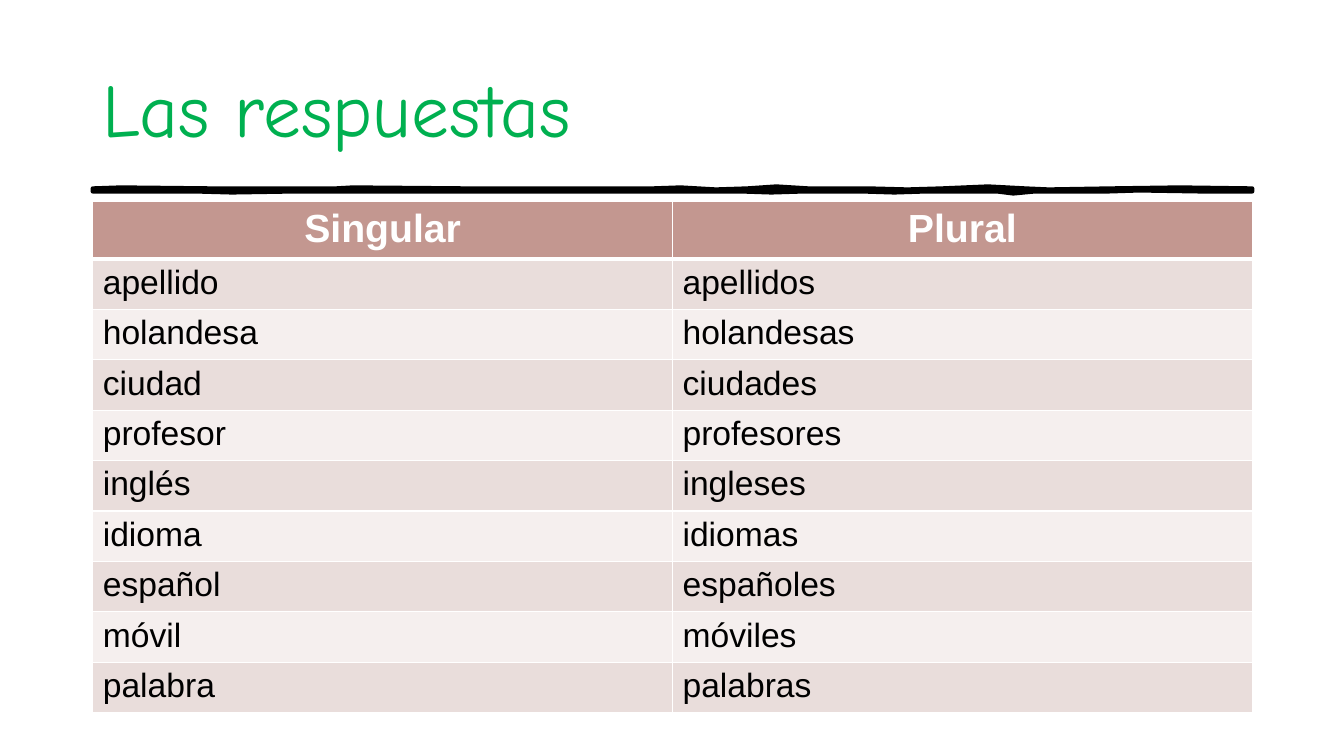
"""Build the answer slide: a title, a hand-drawn rule and a singular/plural table."""
from lxml import etree
from pptx import Presentation, util as u
from pptx.dml.color import RGBColor
from pptx.enum import text
from pptx.oxml.ns import qn

TITLE = "Las respuestas"
HEADINGS = ("Singular", "Plural")
WORDS = [
    ("apellido", "apellidos"),
    ("holandesa", "holandesas"),
    ("ciudad", "ciudades"),
    ("profesor", "profesores"),
    ("inglés", "ingleses"),
    ("idioma", "idiomas"),
    ("español", "españoles"),
    ("móvil", "móviles"),
    ("palabra", "palabras"),
]
THEME = {
    "title": {"name": "Comic Neue", "size": 54, "bold": False, "color": "00B050"},
    "heading": {"name": "Arial", "size": 28, "bold": True, "color": "FFFFFF"},
    "word": {"name": "Arial", "size": 24, "bold": False, "color": "000000"},
    "heading_fill": "C39790",
    "bands": ("E9DDDB", "F5EFEE"),
    "border": "FFFFFF",
    "rule": "000000",
}
LEFT, WIDTH = 0.92, 11.5
TITLE_TOP, TITLE_HEIGHT = 0.4, 1.45
TABLE_TOP, HEADING_HEIGHT, WORD_HEIGHT = 2, 0.53, 0.47
RULE_TOP_EDGE = [
    (0.92, 1.87), (1.2, 1.86), (2.12, 1.87), (3.33, 1.87), (3.5, 1.86), (4.65, 1.87),
    (5.37, 1.87), (5.9, 1.87), (6.47, 1.87), (6.75, 1.86), (7.1, 1.88), (7.41, 1.87),
    (7.7, 1.85), (8.02, 1.87), (8.62, 1.87), (9.0, 1.88), (9.34, 1.87), (9.8, 1.85),
    (10.17, 1.87), (10.4, 1.88), (11.01, 1.87), (11.7, 1.86), (12.42, 1.87),
]
RULE_BOTTOM_EDGE = [
    (12.42, 1.9), (11.93, 1.9), (11.3, 1.89), (10.98, 1.9), (10.26, 1.9), (10.05, 1.92),
    (9.89, 1.9), (9.17, 1.9), (8.87, 1.91), (8.56, 1.9), (7.96, 1.9), (7.65, 1.91),
    (7.36, 1.9), (6.75, 1.9), (6.35, 1.9), (5.92, 1.9), (5.2, 1.9), (4.83, 1.9),
    (4.22, 1.9), (3.39, 1.9), (2.9, 1.9), (2.3, 1.91), (1.95, 1.9), (0.92, 1.9),
]


def write(paragraph, wording, style, align):
    paragraph.alignment = align
    run = paragraph.add_run()
    run.text = wording
    formats = {"name": style["name"], "size": u.Pt(style["size"]), "bold": style["bold"]}
    for attribute, value in formats.items():
        setattr(run.font, attribute, value)
    run.font.color.rgb = RGBColor.from_string(style["color"])


def paint(fill, color):
    fill.solid()
    fill.fore_color.rgb = RGBColor.from_string(color)


def add_borders(cell, points):
    properties = cell._tc.get_or_add_tcPr()
    for position, (side, weight) in enumerate(points.items()):
        edge = etree.Element(qn(f"a:ln{side}"), w=str(u.Pt(weight)))
        solid = etree.SubElement(edge, qn("a:solidFill"))
        etree.SubElement(solid, qn("a:srgbClr"), val=THEME["border"])
        properties.insert(position, edge)


def add_rule(slide):
    start, *rest = [(u.Inches(x), u.Inches(y)) for x, y in RULE_TOP_EDGE + RULE_BOTTOM_EDGE]
    builder = slide.shapes.build_freeform(*start)
    builder.add_line_segments(rest, close=True)
    rule = builder.convert_to_shape()
    rule.shadow.inherit = False
    paint(rule.fill, THEME["rule"])
    paint(rule.line.fill, THEME["rule"])
    rule.line.width = u.Pt(3)
    etree.SubElement(rule.line._get_or_add_ln(), qn("a:round"))


def add_title(slide):
    box = slide.shapes.add_textbox(*map(u.Inches, (LEFT, TITLE_TOP, WIDTH, TITLE_HEIGHT)))
    frame = box.text_frame
    frame.word_wrap = True
    frame.vertical_anchor = text.MSO_ANCHOR.MIDDLE
    frame.paragraphs[0].line_spacing = 0.9
    write(frame.paragraphs[0], TITLE, THEME["title"], text.PP_ALIGN.LEFT)


def add_answers(slide):
    rows = [HEADINGS, *WORDS]
    height = HEADING_HEIGHT + WORD_HEIGHT * len(WORDS)
    bounds = map(u.Inches, (LEFT, TABLE_TOP, WIDTH, height))
    answers = slide.shapes.add_table(len(rows), len(HEADINGS), *bounds).table
    for r, entries in enumerate(rows):
        heading = r == 0
        answers.rows[r].height = u.Inches(HEADING_HEIGHT if heading else WORD_HEIGHT)
        style = THEME["heading" if heading else "word"]
        align = text.PP_ALIGN.CENTER if heading else text.PP_ALIGN.LEFT
        color = THEME["heading_fill"] if heading else THEME["bands"][(r - 1) % 2]
        weights = {"L": 1, "R": 1, "T": 3 if r == 1 else 1, "B": 3 if heading else 1}
        for c, entry in enumerate(entries):
            cell = answers.cell(r, c)
            write(cell.text_frame.paragraphs[0], entry, style, align)
            paint(cell.fill, color)
            add_borders(cell, weights)


def main():
    deck = Presentation()
    deck.slide_width, deck.slide_height = u.Inches(13.33), u.Inches(7.5)
    slide = deck.slides.add_slide(deck.slide_layouts[6])
    add_rule(slide)
    add_title(slide)
    add_answers(slide)
    deck.save("out.pptx")


if __name__ == "__main__":
    main()
